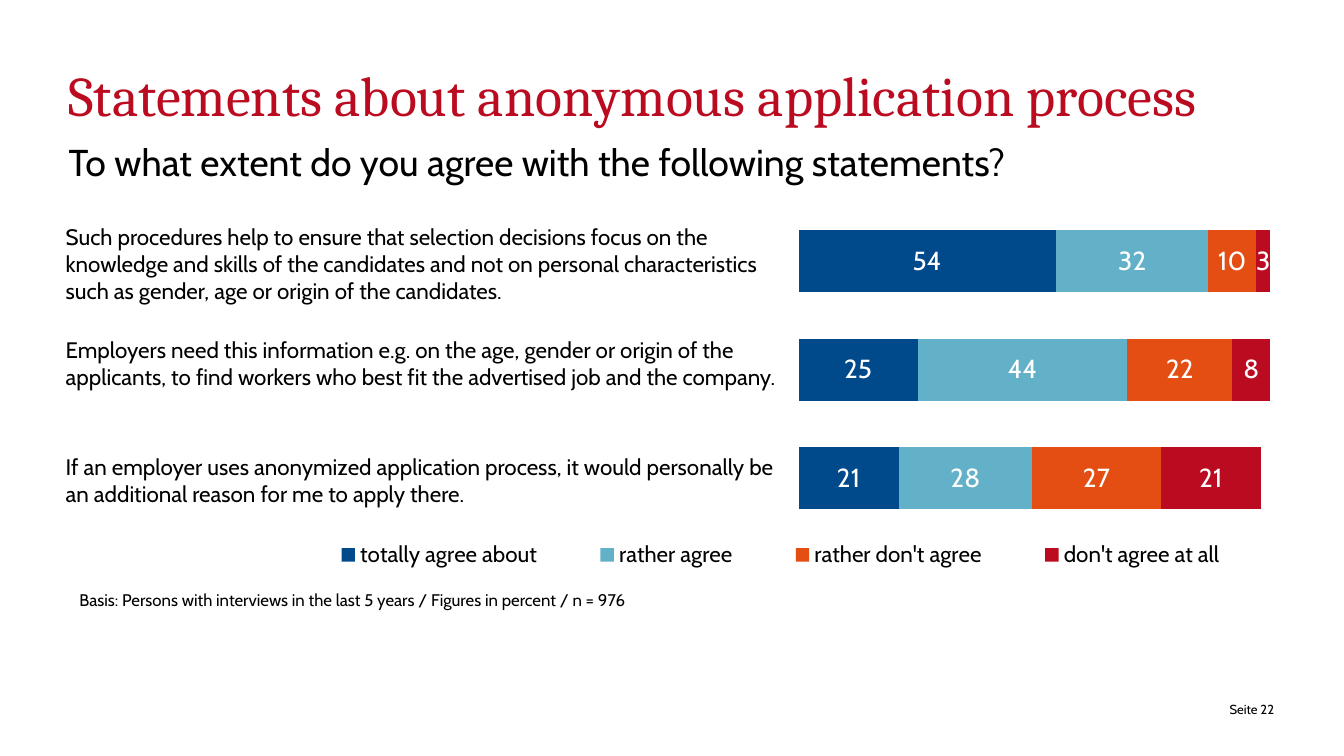
from lxml import etree
from pptx import Presentation
from pptx.chart.data import CategoryChartData
from pptx.dml.color import RGBColor
from pptx.enum.chart import (XL_CHART_TYPE, XL_LABEL_POSITION,
                             XL_LEGEND_POSITION, XL_TICK_LABEL_POSITION, XL_TICK_MARK)
from pptx.enum.text import PP_ALIGN
from pptx.oxml.ns import qn
from pptx.util import Inches, Pt

STACKED = XL_CHART_TYPE.BAR_STACKED
CENTER = XL_LABEL_POSITION.CENTER
BOTTOM = XL_LEGEND_POSITION.BOTTOM
NO_LABELS = XL_TICK_LABEL_POSITION.NONE
NO_TICKS = XL_TICK_MARK.NONE
LEFT, RIGHT = PP_ALIGN.LEFT, PP_ALIGN.RIGHT

COLORS = {"black": "000000", "white": "FFFFFF", "blue": "00498B",
          "light blue": "63B1C9", "orange": "E44E13", "red": "BB0B20"}
BODY_FONT, TITLE_FONT = "Cabin", "Cambria"

TITLE = "Statements about anonymous application process"
QUESTION = "To what extent do you agree with the following statements?"
BASIS = "Basis: Persons with interviews in the last 5 years / Figures in percent / n = 976"
PAGE = "Seite 22"
STATEMENTS = [  # top, height, text
    (1.61, 0.71, "Such procedures help to ensure that selection decisions focus on the "
                 "knowledge and skills of the candidates and not on personal characteristics "
                 "such as gender, age or origin of the candidates."),
    (2.45, 0.5, "Employers need this information e.g. on the age, gender or origin of the "
                "applicants, to find workers who best fit the advertised job and the company."),
    (3.32, 0.5, "If an employer uses anonymized application process, it would personally be "
                "an additional reason for me to apply there."),
]
CATEGORIES = ["1", "2", "3"]  # bottom to top
ANSWERS = [
    ("totally agree about", (21, 25, 54), "blue"),
    ("rather agree", (28, 44, 32), "light blue"),
    ("rather don't agree", (27, 22, 10), "orange"),
    ("don't agree at all", (21, 8, 3), "red"),
]
SLIDE_WIDTH = 10
MARGIN, CONTENT_WIDTH = 0.51, 8.98


def rgb(color):
    return RGBColor.from_string(COLORS[color])


def style(font, size, color="black", name=BODY_FONT):
    font.size, font.name = Pt(size), name
    font.color.rgb = rgb(color)


def add_text(slide, box, text, size, color="black", font=BODY_FONT,
             insets=(0, 0, 0, 0), align=LEFT, spacing=None, after=None):
    frame = slide.shapes.add_textbox(*map(Inches, box)).text_frame
    frame.word_wrap = True
    (frame.margin_left, frame.margin_top,
     frame.margin_right, frame.margin_bottom) = map(Inches, insets)
    paragraph = frame.paragraphs[0]
    paragraph.text = text
    paragraph.alignment = align
    if spacing:
        paragraph.line_spacing = spacing
    if after:
        paragraph.space_after = Pt(after)
    style(paragraph.font, size, color, font)


def set_layout(part, x, y, w, h, inner=False):
    """Fix a chart part's place, in fractions of the chart area."""
    layout = part.find(qn("c:layout"))
    if layout is None:
        layout = etree.Element(qn("c:layout"))
        if inner:
            part.insert(0, layout)
        else:
            part.find(qn("c:legendPos")).addnext(layout)
    manual = etree.SubElement(layout, qn("c:manualLayout"))
    settings = [("layoutTarget", "inner")] if inner else []
    settings += [("xMode", "edge"), ("yMode", "edge"), ("x", x), ("y", y), ("w", w), ("h", h)]
    for tag, value in settings:
        etree.SubElement(manual, qn(f"c:{tag}")).set("val", str(value))


def add_answer_chart(slide):
    data = CategoryChartData(number_format="0")
    data.categories = CATEGORIES
    for name, values, _ in ANSWERS:
        data.add_series(name, values)
    box = (MARGIN, 1.54, CONTENT_WIDTH, 2.83)
    chart = slide.shapes.add_chart(STACKED, *map(Inches, box), data).chart
    style(chart.font, 12)
    chart.has_title = False

    chart.category_axis.visible = False
    axis = chart.value_axis
    axis.minimum_scale, axis.maximum_scale = 0, 100
    axis.has_major_gridlines = False
    axis.tick_label_position = NO_LABELS
    axis.major_tick_mark = axis.minor_tick_mark = NO_TICKS
    axis.format.line.fill.background()

    plot = chart.plots[0]
    plot.gap_width, plot.overlap = 75, 100
    plot.vary_by_categories = False
    for series, (_, _, color) in zip(plot.series, ANSWERS):
        series.format.fill.solid()
        series.format.fill.fore_color.rgb = rgb(color)
        labels = series.data_labels
        labels.show_value = True
        labels.position = CENTER
        labels.number_format, labels.number_format_is_linked = "0", False
        style(labels.font, 14, "white")

    chart.has_legend = True
    legend = chart.legend
    legend.position, legend.include_in_layout = BOTTOM, False
    style(legend.font, 12)
    plot_area = chart.element.find(".//" + qn("c:plotArea"))
    set_layout(plot_area, 0.605, 0, 0.395, 0.856, inner=True)
    set_layout(chart.element.find(".//" + qn("c:legend")), 0.18, 0.86, 0.82, 0.11)


def main():
    deck = Presentation()
    deck.slide_width, deck.slide_height = Inches(SLIDE_WIDTH), Inches(SLIDE_WIDTH * 9 / 16)
    slide = deck.slides.add_slide(deck.slide_layouts[6])

    add_answer_chart(slide)
    add_text(slide, (MARGIN, 1, CONTENT_WIDTH, 0.47), QUESTION, 20, spacing=1.1)
    add_text(slide, (8.48, 5.17, 1, 0.16), PAGE, 7, insets=(0, 0.05, 0, 0), align=RIGHT)
    add_text(slide, (MARGIN, 0.45, CONTENT_WIDTH, 0.94), TITLE, 30, "red", TITLE_FONT)
    add_text(slide, (0.59, 4.37, CONTENT_WIDTH, 0.12), BASIS, 9, spacing=1.1, after=10)
    for top, height, statement in STATEMENTS:
        add_text(slide, (0.39, top, 5.55, height), statement, 12,
                 insets=(0.1, 0.05, 0.1, 0.05))
    deck.save("out.pptx")


if __name__ == "__main__":
    main()
